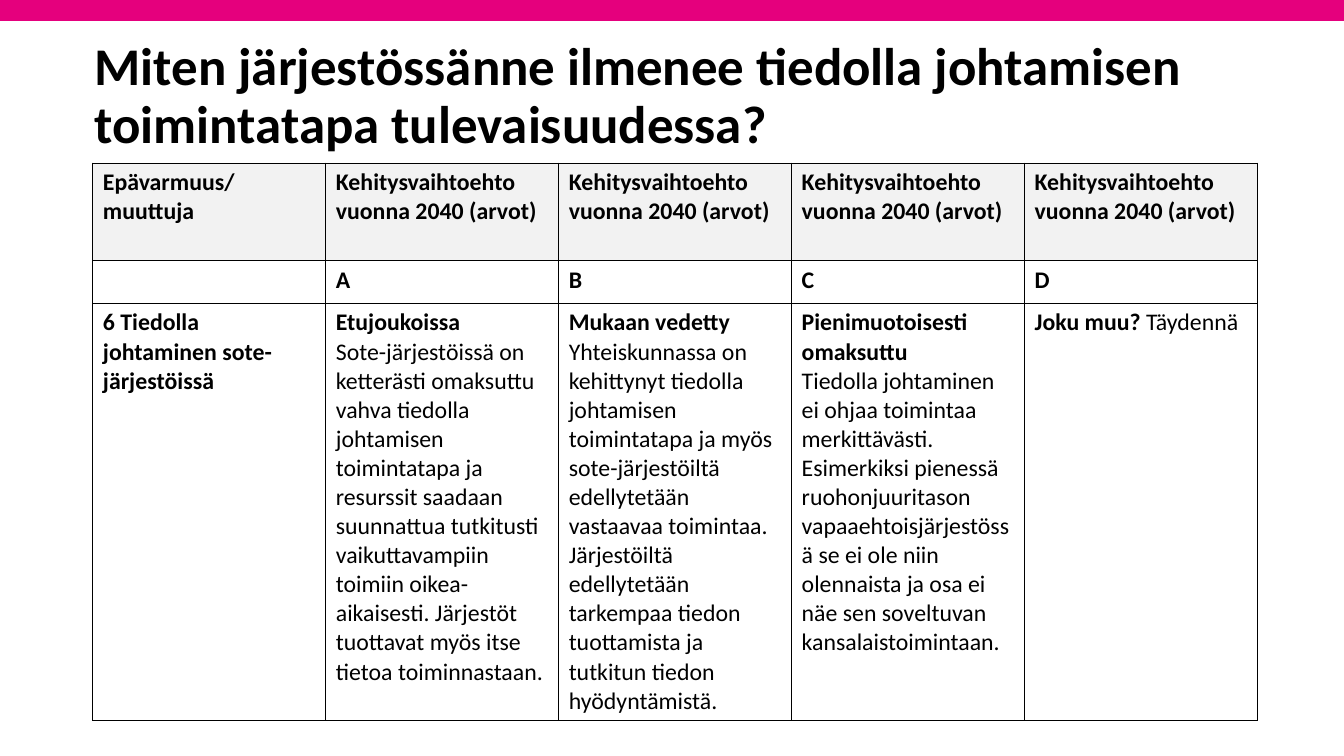
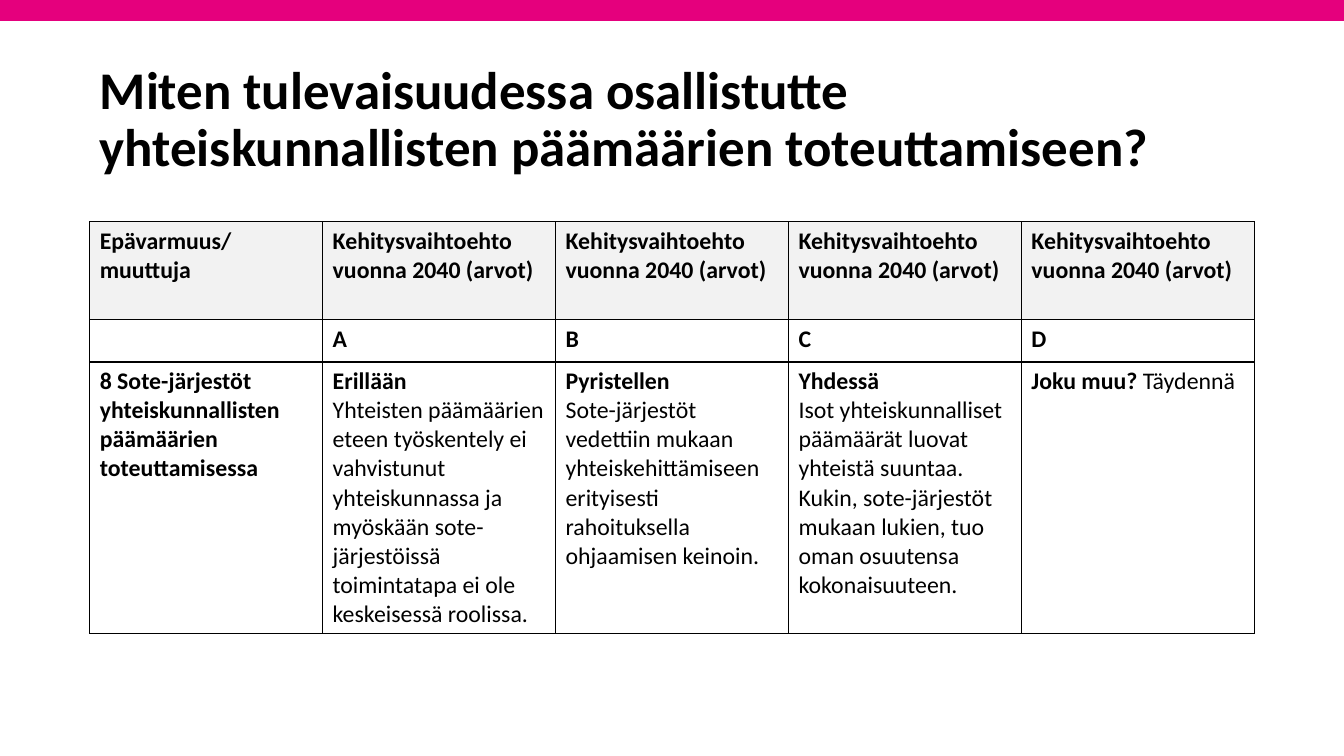
from dataclasses import dataclass

from lxml import etree
from pptx import Presentation
from pptx.dml.color import RGBColor
from pptx.enum import shapes, text
from pptx.oxml.ns import qn
from pptx.util import Cm, Pt

HEADER = ["Epävarmuus/\nmuuttuja"] + ["Kehitysvaihtoehto vuonna 2040 (arvot)"] * 4
LETTERS = ["", "A", "B", "C", "D"]
OTHER = ("Joku muu? ", "Täydennä")

# Each option is (bold lead, plain text); positions are (left, top) in cm.
SLIDES = [
    {
        "title": "Miten järjestössänne ilmenee tiedolla johtamisen toimintatapa tulevaisuudessa?",
        "title_at": (2.13, 1.12),
        "table_at": (2.34, 4.11),
        "option_height": 10.5,
        "variable": "6 Tiedolla johtaminen sote-järjestöissä",
        "options": [
            ("Etujoukoissa\v",
             "Sote-järjestöissä on ketterästi omaksuttu vahva tiedolla johtamisen "
             "toimintatapa ja resurssit saadaan suunnattua tutkitusti vaikuttavampiin "
             "toimiin oikea-aikaisesti. Järjestöt tuottavat myös itse tietoa toiminnastaan."),
            ("Mukaan vedetty\v",
             "Yhteiskunnassa on kehittynyt tiedolla johtamisen toimintatapa ja myös "
             "sote-järjestöiltä edellytetään vastaavaa toimintaa. Järjestöiltä edellytetään "
             "tarkempaa tiedon tuottamista ja tutkitun tiedon hyödyntämistä."),
            ("Pienimuotoisesti omaksuttu\v",
             "Tiedolla johtaminen ei ohjaa toimintaa merkittävästi. Esimerkiksi pienessä "
             "ruohonjuuritason vapaaehtoisjärjestössä se ei ole niin olennaista ja osa ei "
             "näe sen soveltuvan kansalaistoimintaan."),
        ],
    },
    {
        "title": "Miten tulevaisuudessa osallistutte yhteiskunnallisten päämäärien toteuttamiseen?",
        "title_at": (2.26, 1.7),
        "table_at": (2.26, 5.59),
        "option_height": 6.85,
        "variable": "8 Sote-järjestöt yhteiskunnallisten päämäärien toteuttamisessa",
        "options": [
            ("Erillään\v",
             "Yhteisten päämäärien eteen työskentely ei vahvistunut yhteiskunnassa ja "
             "myöskään sote-järjestöissä toimintatapa ei ole keskeisessä roolissa."),
            ("Pyristellen\v",
             "Sote-järjestöt vedettiin mukaan yhteiskehittämiseen erityisesti "
             "rahoituksella ohjaamisen keinoin."),
            ("Yhdessä\v",
             "Isot yhteiskunnalliset päämäärät luovat yhteistä suuntaa. Kukin, "
             "sote-järjestöt mukaan lukien, tuo oman osuutensa kokonaisuuteen."),
        ],
    },
]


@dataclass(frozen=True)
class Theme:
    font: str = "Calibri"
    ink: str = "000000"
    band: str = "E5007D"
    header: str = "F2F2F2"
    paper: str = "FFFFFF"
    title_size: float = 37.8
    cell_size: float = 17
    border: float = 1


THEME = Theme()
WIDTH, HEIGHT = Cm(33.87), Cm(19.05)
TITLE_SIZE = Cm(29.21), Cm(2.67)
COLUMN = Cm(5.87)
HEADER_HEIGHT, LETTER_HEIGHT = Cm(2.46), Cm(1.07)


def set_font(font, size, bold=True):
    for name, value in {"name": THEME.font, "size": Pt(size), "bold": bold}.items():
        setattr(font, name, value)
    font.color.rgb = RGBColor.from_string(THEME.ink)


def add_band(prs, s):
    """Draw the top band and move it to the master, behind everything."""
    sp = s.shapes.add_shape(shapes.MSO_SHAPE.RECTANGLE, 0, Cm(-0.13), WIDTH, Cm(0.66))
    sp.shadow.inherit = False
    sp.fill.solid()
    sp.fill.fore_color.rgb = RGBColor.from_string(THEME.band)
    sp.line.fill.background()
    master = prs.slide_master.shapes
    new_id = max(shape.shape_id for shape in master) + 1
    sp.element.nvSpPr.cNvPr.set("id", str(new_id))
    master.element.insert(2, sp.element)


def add_title(s, title, at):
    sp = s.shapes.title
    sp.left, sp.top = map(Cm, at)
    sp.width, sp.height = TITLE_SIZE
    tf = sp.text_frame
    tf.text = title
    for name, value in {"word_wrap": True, "auto_size": text.MSO_AUTO_SIZE.NONE,
                        "vertical_anchor": text.MSO_ANCHOR.MIDDLE}.items():
        setattr(tf, name, value)
    p = tf.paragraphs[0]
    p.alignment, p.line_spacing = text.PP_ALIGN.LEFT, 0.9
    set_font(p.runs[0].font, THEME.title_size)


def add_borders(cell):
    tc_pr = cell._tc.get_or_add_tcPr()
    for i, side in enumerate(("lnL", "lnR", "lnT", "lnB")):
        ln = etree.Element(qn(f"a:{side}"), w=str(Pt(THEME.border)))
        fill = etree.SubElement(ln, qn("a:solidFill"))
        etree.SubElement(fill, qn("a:srgbClr"), val=THEME.ink)
        tc_pr.insert(i, ln)


def fill_cell(cell, content, color):
    """Write bold text, or a (bold lead, plain text) pair, on a bordered cell."""
    lead, body = content if isinstance(content, tuple) else (content, "")
    tf = cell.text_frame
    tf.text = lead
    for p in tf.paragraphs:
        set_font(p.font, THEME.cell_size)
        for r in p.runs:
            set_font(r.font, THEME.cell_size)
    if body:
        r = tf.paragraphs[-1].add_run()
        r.text = body
        set_font(r.font, THEME.cell_size, bold=False)
    cell.fill.solid()
    cell.fill.fore_color.rgb = RGBColor.from_string(color)
    add_borders(cell)


def add_options_table(s, data):
    rows = [
        (HEADER, HEADER_HEIGHT, THEME.header),
        (LETTERS, LETTER_HEIGHT, THEME.paper),
        ([data["variable"], *data["options"], OTHER], Cm(data["option_height"]), THEME.paper),
    ]
    columns = len(HEADER)
    left, top = map(Cm, data["table_at"])
    table = s.shapes.add_table(len(rows), columns, left, top, COLUMN * columns,
                               sum(height for _, height, _ in rows)).table
    table.first_row = table.horz_banding = False
    for column in table.columns:
        column.width = COLUMN
    for i, (contents, height, color) in enumerate(rows):
        table.rows[i].height = height
        for j, content in enumerate(contents):
            fill_cell(table.cell(i, j), content, color)


def main():
    prs = Presentation()
    prs.slide_width, prs.slide_height = WIDTH, HEIGHT
    for i, data in enumerate(SLIDES):
        s = prs.slides.add_slide(prs.slide_layouts.get_by_name("Title Only"))
        if i == 0:
            add_band(prs, s)
        add_title(s, data["title"], data["title_at"])
        add_options_table(s, data)
    prs.save("out.pptx")


if __name__ == "__main__":
    main()
